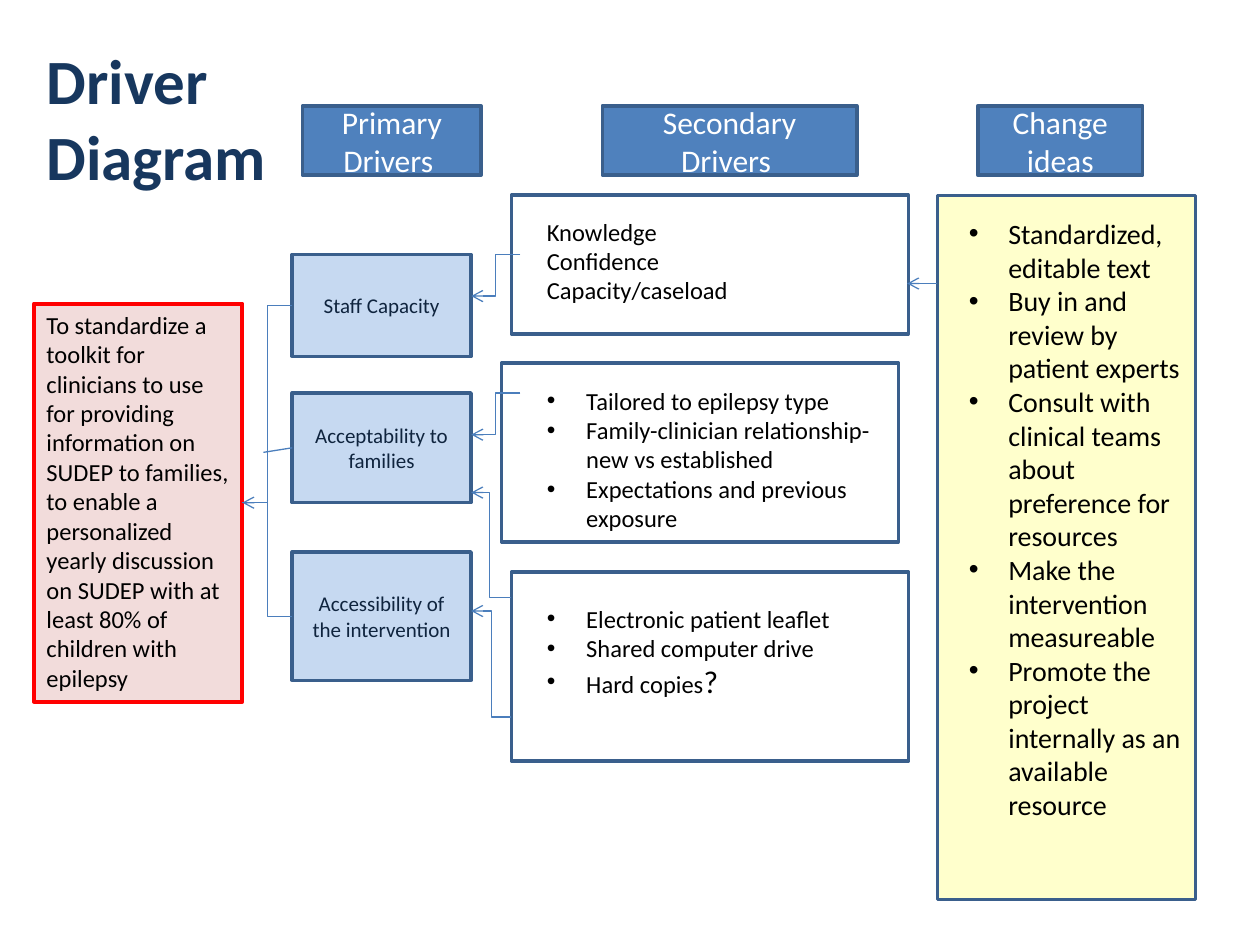
from dataclasses import dataclass
from typing import Optional

from lxml import etree
from pptx import Presentation
from pptx.dml.color import RGBColor
from pptx.enum.shapes import MSO_CONNECTOR, MSO_SHAPE
from pptx.enum.text import MSO_ANCHOR, MSO_AUTO_SIZE, PP_ALIGN
from pptx.oxml.ns import qn
from pptx.util import Pt

RECT = MSO_SHAPE.RECTANGLE
ELBOW, STRAIGHT = MSO_CONNECTOR.ELBOW, MSO_CONNECTOR.STRAIGHT
TOP, MIDDLE = MSO_ANCHOR.TOP, MSO_ANCHOR.MIDDLE
LEFT, CENTER = PP_ALIGN.LEFT, PP_ALIGN.CENTER
NO_FIT = MSO_AUTO_SIZE.NONE

FONT = "Calibri"
BLACK = RGBColor(0x00, 0x00, 0x00)
WHITE = RGBColor(0xFF, 0xFF, 0xFF)
NAVY = RGBColor(0x17, 0x37, 0x5E)
INK = RGBColor(0x0F, 0x24, 0x3E)
BLUE = RGBColor(0x4F, 0x81, 0xBD)
EDGE = RGBColor(0x3A, 0x5F, 0x8C)
WIRE = RGBColor(0x4B, 0x7E, 0xBC)
PALE = RGBColor(0xC6, 0xD9, 0xF1)
PINK = RGBColor(0xF2, 0xDC, 0xDB)
RED = RGBColor(0xFF, 0x00, 0x00)
CREAM = RGBColor(0xFF, 0xFF, 0xCC)


@dataclass
class Box:
    x: float
    y: float
    w: float
    h: float
    text: str = ""
    size: float = 12
    color: RGBColor = INK
    fill: Optional[RGBColor] = None
    edge: RGBColor = EDGE
    weight: float = 2
    align: PP_ALIGN = CENTER
    anchor: MSO_ANCHOR = MIDDLE


@dataclass
class Items:
    slot: int
    x: float
    y: float
    w: float
    h: float
    size: float
    lines: list
    bullet: bool = True


@dataclass
class Link:
    start: tuple
    end: tuple
    kind: MSO_CONNECTOR = ELBOW
    arrow: bool = True
    bend: int = 50


def add_run(para, text: str, size: float, color: RGBColor, bold: bool = False):
    run = para.add_run()
    run.text = text
    font = run.font
    font.name, font.size, font.bold = FONT, Pt(size), bold
    font.color.rgb = color


def place(shape, x: float, y: float, w: float, h: float):
    shape.left, shape.top, shape.width, shape.height = Pt(x), Pt(y), Pt(w), Pt(h)


def draw_box(slide, box: Box):
    shape = slide.shapes.add_shape(RECT, Pt(box.x), Pt(box.y), Pt(box.w), Pt(box.h))
    shape.shadow.inherit = False
    if box.fill is None:
        shape.fill.background()
    else:
        shape.fill.solid()
        shape.fill.fore_color.rgb = box.fill
    shape.line.color.rgb = box.edge
    shape.line.width = Pt(box.weight)
    if box.text:
        frame = shape.text_frame
        frame.word_wrap = True
        frame.vertical_anchor = box.anchor
        para = frame.paragraphs[0]
        para.alignment = box.align
        add_run(para, box.text, box.size, box.color)
    return shape


def draw_items(slide, items: Items):
    holder = slide.placeholders[items.slot]
    place(holder, items.x, items.y, items.w, items.h)
    slide.shapes._spTree.append(holder._element)  # bring above the boxes
    frame = holder.text_frame
    frame.word_wrap, frame.auto_size = True, NO_FIT
    frame.vertical_anchor = TOP
    for i, line in enumerate(items.lines):
        para = frame.paragraphs[0] if i == 0 else frame.add_paragraph()
        props = para._p.get_or_add_pPr()
        indent = Pt(22.5) if items.bullet else 0
        props.set("marL", str(indent))
        props.set("indent", str(-indent))
        if items.bullet:
            etree.SubElement(props, qn("a:buFont"), typeface="Arial")
            etree.SubElement(props, qn("a:buChar"), char="•")
        else:
            etree.SubElement(props, qn("a:buNone"))
        para.alignment = LEFT
        para.space_before = Pt(0)
        for text, size in line if isinstance(line, list) else [(line, items.size)]:
            add_run(para, text, size, BLACK)


def draw_link(slide, link: Link):
    ends = [Pt(v) for v in (*link.start, *link.end)]
    wire = slide.shapes.add_connector(link.kind, *ends)
    wire.line.color.rgb = WIRE
    wire.line.width = Pt(0.75)
    props = wire._element.spPr
    if link.arrow:
        etree.SubElement(props.find(qn("a:ln")), qn("a:tailEnd"), type="arrow")
    if link.bend != 50:
        guides = props.find(qn("a:prstGeom")).find(qn("a:avLst"))
        etree.SubElement(guides, qn("a:gd"), name="adj1", fmla=f"val {link.bend * 1000}")
    etree.SubElement(props, qn("a:effectLst"))
    return wire


GOAL = Box(19.5, 173.5, 119, 227.5,
           "To standardize a toolkit for clinicians to use for providing information on "
           "SUDEP to families, to enable a personalized yearly discussion on SUDEP with "
           "at least 80% of children with epilepsy",
           14, BLACK, PINK, RED, 2.25, LEFT, TOP)

HEADS = [(172.8, 102.2, "Primary Drivers "), (344.2, 145.4, "Secondary Drivers "),
         (558.7, 94.3, "Change ideas")]

PRIMARY = [(145.4, 58.3, "Staff Capacity"), (224.6, 62.6, "Acceptability to families"),
           (315.4, 73.4, "Accessibility of the intervention")]

FRAMES = [Box(292.3, 111.6, 226.8, 79.2), Box(286.6, 207.4, 226.8, 102.2),
          Box(292.3, 326.9, 226.8, 108),
          Box(535.7, 111.6, 147.6, 402.5, fill=CREAM)]

LISTS = [
    Items(1, 305.3, 120.2, 200.2, 58.3, 14,
          ["Knowledge", "Confidence", "Capacity/caseload"], False),
    Items(2, 305.3, 216.7, 200.2, 92.2, 14,
          ["Tailored to epilepsy type",
           "Family-clinician relationship- new vs established",
           "Expectations and previous exposure"]),
    Items(3, 305.3, 341.3, 200.2, 63.4, 14,
          ["Electronic patient leaflet", "Shared computer drive",
           [("Hard copies", 14), ("?", 18)]]),
    Items(4, 546.5, 120.2, 136.1, 356.4, 16,
          ["Standardized, editable text", "Buy in and review by patient experts",
           "Consult with clinical teams about preference for resources",
           "Make the intervention measureable",
           "Promote the project internally as an available resource"]),
]

LINKS = [
    Link((297.4, 145.4), (269.3, 169.2)),
    Link((297.4, 224.6), (269.3, 248.4)),
    Link((292.3, 409.7), (269.3, 349.2)),
    Link((292.3, 341.3), (269.3, 281.5), bend=55),
    Link((535.7, 162), (518.4, 162), STRAIGHT),
]


def main():
    deck = Presentation()
    deck.slide_width, deck.slide_height = Pt(720), Pt(540)
    slide = deck.slides.add_slide(deck.slide_layouts[4])

    # Title
    title = slide.shapes.title
    place(title, 19.5, 20.2, 148.3, 90.7)
    frame = title.text_frame
    frame.word_wrap, frame.auto_size = True, NO_FIT
    frame.vertical_anchor = TOP
    frame.paragraphs[0].alignment = LEFT
    add_run(frame.paragraphs[0], "Driver Diagram", 36, NAVY, True)

    # Goal, column heads, drivers and frames
    goal = draw_box(slide, GOAL)
    for x, w, text in HEADS:
        draw_box(slide, Box(x, 60.5, w, 39.6, text, 18, WHITE, BLUE))
    staff, accept, access = [draw_box(slide, Box(167, y, 102.2, h, text, fill=PALE))
                             for y, h, text in PRIMARY]
    for box in FRAMES:
        draw_box(slide, box)

    # Links from primary drivers to the goal
    wire = draw_link(slide, Link((167, 174.5), (138.5, 287.3)))
    wire.begin_connect(staff, 1)
    wire.end_connect(goal, 3)
    wire = draw_link(slide, Link((138.5, 287.3), (167, 352.1), arrow=False))
    wire.begin_connect(goal, 3)
    wire.end_connect(access, 1)
    wire = draw_link(slide, Link((167, 255.9), (150.5, 258.5), STRAIGHT, False))
    wire.begin_connect(accept, 1)

    # Other links and lists
    for link in LINKS:
        draw_link(slide, link)
    for items in LISTS:
        draw_items(slide, items)

    deck.save("out.pptx")


if __name__ == "__main__":
    main()
